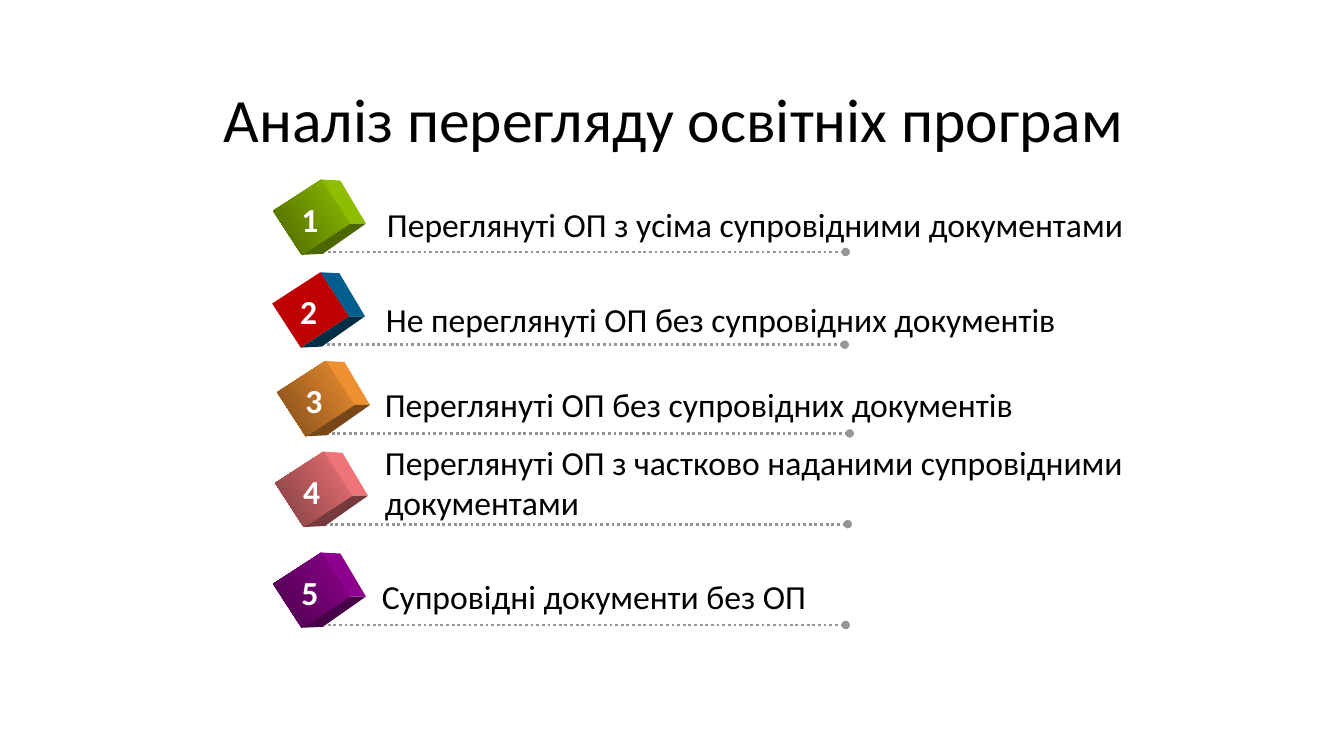
from dataclasses import dataclass
from math import cos, radians, sin

from lxml.etree import SubElement
from pptx import Presentation
from pptx.dml.color import RGBColor as RGB
from pptx.enum.dml import MSO_LINE
from pptx.enum.shapes import MSO_CONNECTOR as CONN, MSO_SHAPE as SHAPE
from pptx.enum.text import MSO_ANCHOR as ANCHOR, MSO_AUTO_SIZE as FIT, PP_ALIGN as ALIGN
from pptx.oxml.ns import qn
from pptx.util import Inches, Pt


@dataclass(frozen=True)
class Theme:
    font: str = "Calibri"
    title_size: int = 44
    body_size: int = 24
    ink: str = "000000"
    light: str = "FFFFFF"
    rule: str = "969696"
    rule_width: float = 2
    cell: float = 0.1


class Deck:
    def __init__(self, theme):
        self.theme = theme
        self.prs = Presentation()
        self.prs.slide_width, self.prs.slide_height = self.grid(133.33, 75)
        self.slide = self.prs.slides.add_slide(self.prs.slide_layouts[5])
        self.shapes = self.slide.shapes

    def grid(self, *cells):
        return [Inches(c * self.theme.cell) for c in cells]

    def group(self):
        self.shapes = self.slide.shapes.add_group_shape().shapes

    def run(self, p, text, size, color, bold=False):
        r = p.add_run()
        r.text = text
        r.font.name = self.theme.font
        r.font.size = Pt(size)
        r.font.bold = bold
        r.font.color.rgb = RGB.from_string(color)

    def title(self, text, *box):
        sp = self.slide.shapes.title
        sp.left, sp.top, sp.width, sp.height = self.grid(*box)
        tf = sp.text_frame
        tf.vertical_anchor = ANCHOR.MIDDLE
        p = tf.paragraphs[0]
        p.alignment = ALIGN.LEFT
        p.line_spacing = 0.9
        self.run(p, text, self.theme.title_size, self.theme.ink)

    def text(self, text, box, color, bold=False, wrap=True):
        tf = self.shapes.add_textbox(*self.grid(*box)).text_frame
        tf.word_wrap = wrap
        tf.auto_size = FIT.SHAPE_TO_FIT_TEXT
        self.run(tf.paragraphs[0], text, self.theme.body_size, color, bold)

    def dotted_rule(self, x, y, length):
        cx = self.shapes.add_connector(CONN.STRAIGHT, *self.grid(x, y, x + length, y))
        cx.line.color.rgb = RGB.from_string(self.theme.rule)
        cx.line.width = Pt(self.theme.rule_width)
        cx.line.dash_style = MSO_LINE.ROUND_DOT
        SubElement(cx.line._get_or_add_ln(), qn("a:tailEnd"), type="oval")
        SubElement(cx._element.spPr, qn("a:effectLst"))

    def face(self, points, color):
        start, *rest = [self.grid(*pt) for pt in points]
        builder = self.shapes.build_freeform(*start, scale=1.0)
        builder.add_line_segments(rest, close=True)
        sp = builder.convert_to_shape()
        sp.fill.solid()
        sp.fill.fore_color.rgb = RGB.from_string(color)
        sp.line.fill.background()
        sp.shadow.inherit = False

    def cube(self, x, y, front, side, base):
        w, h, turn = 5.2, 5.7, 57
        c, s = cos(radians(turn)), sin(radians(turn))

        def corner(sx, sy, dx=0, dy=0):
            u, v = sx * w / 2, sy * h / 2
            return x + w / 2 + u * c - v * s + dx, y + h / 2 + u * s + v * c + dy

        top, right, bottom = corner(-1, -1), corner(1, -1), corner(1, 1)
        back_top = corner(-1, -1, 1.9, 0.1)
        back_right = corner(1, -1, 1.6, 0)
        back_bottom = corner(1, 1, 2.1, -0.1)
        self.face([top, back_top, back_right, right], side)
        self.face([bottom, right, back_right, back_bottom], base)

        sp = self.shapes.add_shape(SHAPE.RECTANGLE, *self.grid(x, y, w, h))
        sp.rotation = turn
        sp.line.fill.background()
        sp.shadow.inherit = False
        if len(front) == 1:
            sp.fill.solid()
            sp.fill.fore_color.rgb = RGB.from_string(front[0])
        else:
            sp.fill.gradient()
            sp.fill.gradient_angle = 270
            for stop, color in zip(sp.fill.gradient_stops, front):
                stop.color.rgb = RGB.from_string(color)

    def item(self, number, x, y, label, label_box, front, side, base):
        self.group()
        self.dotted_rule(x + 3.1, y + 6.3, 52.5)
        self.cube(x, y, front, side, base)
        self.text(label, label_box, self.theme.ink)
        self.text(str(number), (x + 0.6, y + 0.5, 3.9, 5), self.theme.light, bold=True, wrap=False)


ITEMS = [
    (28.3, 18.7, "Переглянуті ОП з усіма супровідними документами",
     (37.4, 19.7, 77.9, 5.1), ("8EBE00", "4C6600"), "8EBE00", "4C6600"),
    (28.2, 27.9, "Не переглянуті ОП без супровідних документів",
     (37.3, 29.2, 77.7, 5.1), ("BE0000",), "005F8E", "002E46"),
    (28.7, 36.7, "Переглянуті ОП без супровідних документів",
     (37.2, 37.6, 72.6, 5.1), ("EE8F30", "7F4C19"), "EE8F30", "774718"),
    (28.5, 45.7, "Переглянуті ОП з частково наданими супровідними документами",
     (37.2, 43.3, 80.9, 9.1), ("EE7478", "7F3E40"), "EE7478", "773A3C"),
    (28.3, 55.7, "Супровідні документи без ОП",
     (36.9, 56.6, 50.9, 5.1), ("8E008E", "4A004A"), "8E008E", "480048"),
]


def main():
    deck = Deck(Theme())
    deck.title("Аналіз перегляду освітніх програм", 21.2, 7.3, 105.8, 9.7)
    for number, item in enumerate(ITEMS, 1):
        deck.item(number, *item)
    deck.prs.save("out.pptx")


if __name__ == "__main__":
    main()
